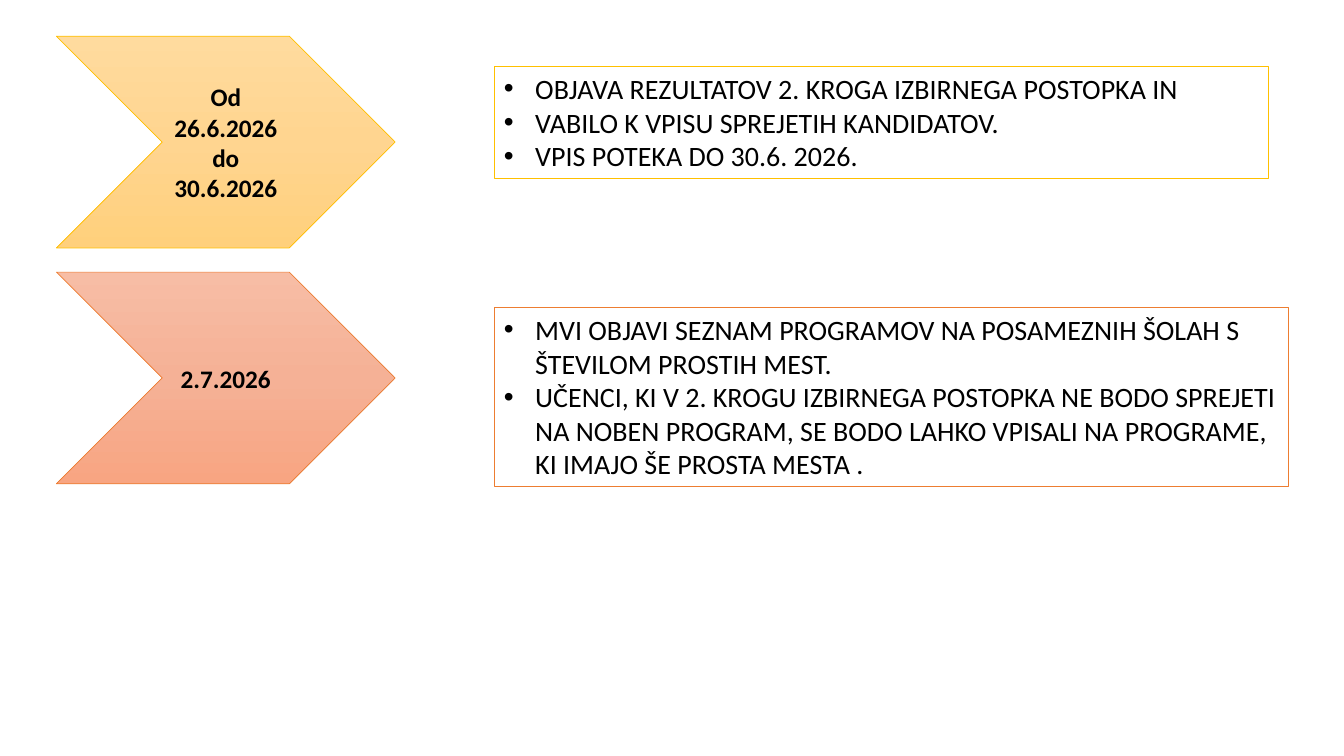
from copy import deepcopy

from lxml import etree
from pptx import Presentation, util as u
from pptx.dml.color import RGBColor
from pptx.enum import shapes, text
from pptx.oxml.ns import qn

FONT = "Calibri"
BLACK = "000000"
LEFT, TOP = 0.56, 0.36
CHEVRON_WIDTH, CHEVRON_HEIGHT = 3.36, 2.1
ROW_PITCH = 2.34
DETAILS_LEFT = 4.9
BULLET_INDENT = 0.31

# Each step: date, gradient colours, line colour, details box (top, width, height), details
STEPS = [
    ("Od 26.6.2026 do 30.6.2026", ("FFDB9E", "FFD590", "FFD07C"), "FFC000",
     (0.66, 7.68, 1.11),
     ["OBJAVA REZULTATOV 2. KROGA IZBIRNEGA POSTOPKA IN",
      "VABILO K VPISU SPREJETIH KANDIDATOV.",
      "VPIS POTEKA DO 30.6. 2026."]),
    ("2.7.2026", ("F7BDA5", "F5B196", "F8A582"), "ED7D31",
     (3.05, 7.88, 1.78),
     ["MVI OBJAVI SEZNAM PROGRAMOV NA POSAMEZNIH ŠOLAH S ŠTEVILOM PROSTIH MEST.",
      "UČENCI, KI V 2. KROGU IZBIRNEGA POSTOPKA NE BODO SPREJETI NA NOBEN PROGRAM, "
      "SE BODO LAHKO VPISALI NA PROGRAME, KI IMAJO ŠE PROSTA MESTA ."]),
]


def color(value):
    return RGBColor.from_string(value)


def add_outlined(slide, kind, box, line_color, line_width):
    shape = slide.shapes.add_shape(kind, *(u.Inches(length) for length in box))
    shape.shadow.inherit = False
    shape.line.color.rgb = color(line_color)
    shape.line.width = u.Pt(line_width)
    return shape


def fill_gradient(shape, colors):
    """Spread the colours evenly from top to bottom."""
    shape.fill.gradient()
    shape.fill.gradient_angle = 270
    stop_list = shape.element.spPr.find(qn("a:gradFill")).find(qn("a:gsLst"))
    stop_list.insert(1, deepcopy(stop_list[0]))
    for index, (stop, value) in enumerate(zip(shape.fill.gradient_stops, colors)):
        stop.position = index / (len(colors) - 1)
        stop.color.rgb = color(value)


def add_bullet(paragraph):
    properties = paragraph._p.get_or_add_pPr()
    properties.set("marL", str(u.Inches(BULLET_INDENT)))
    properties.set("indent", str(-u.Inches(BULLET_INDENT)))
    etree.SubElement(properties, qn("a:buFont")).set("typeface", "Arial")
    etree.SubElement(properties, qn("a:buChar")).set("char", "•")


def write(shape, lines, size, bold=False, bullets=False,
          align=text.PP_ALIGN.LEFT, anchor=text.MSO_ANCHOR.TOP):
    frame = shape.text_frame
    frame.word_wrap = True
    frame.vertical_anchor = anchor
    for index, line in enumerate(lines):
        paragraph = frame.add_paragraph() if index else frame.paragraphs[0]
        paragraph.alignment = align
        if bullets:
            add_bullet(paragraph)
        run = paragraph.add_run()
        run.text = line
        run.font.name = FONT
        run.font.size = u.Pt(size)
        run.font.bold = bold
        run.font.color.rgb = color(BLACK)


def add_date(slide, box, date, colors, line_color):
    chevron = add_outlined(slide, shapes.MSO_SHAPE.CHEVRON, box, line_color, 0.5)
    fill_gradient(chevron, colors)
    write(chevron, [date], 18, bold=True,
          align=text.PP_ALIGN.CENTER, anchor=text.MSO_ANCHOR.MIDDLE)


def add_details(slide, box, lines, line_color):
    details = add_outlined(slide, shapes.MSO_SHAPE.RECTANGLE, box, line_color, 0.75)
    details.fill.background()
    write(details, lines, 20, bullets=True)
    details.text_frame.auto_size = text.MSO_AUTO_SIZE.SHAPE_TO_FIT_TEXT


def main():
    presentation = Presentation()
    presentation.slide_width = u.Inches(13.33)
    presentation.slide_height = u.Inches(7.5)
    slide = presentation.slides.add_slide(presentation.slide_layouts[6])

    # One row per enrolment step
    for row, (date, colors, line_color, (top, width, height), lines) in enumerate(STEPS):
        date_box = (LEFT, TOP + row * ROW_PITCH, CHEVRON_WIDTH, CHEVRON_HEIGHT)
        add_date(slide, date_box, date, colors, line_color)
        add_details(slide, (DETAILS_LEFT, top, width, height), lines, line_color)

    presentation.save("out.pptx")


if __name__ == "__main__":
    main()
